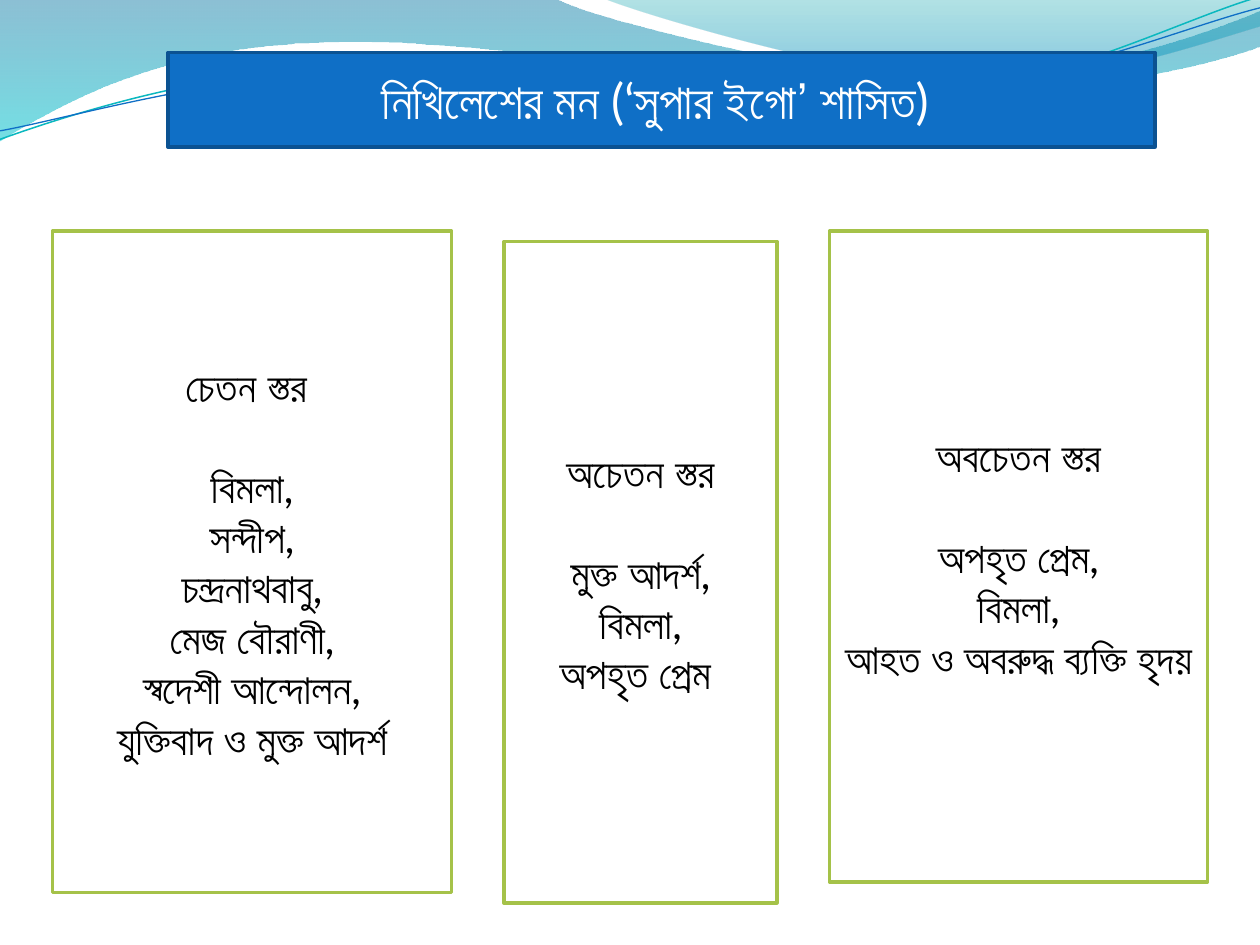
from math import cos, sin, radians
from lxml.etree import SubElement as Sub
from pptx import Presentation
from pptx.dml.color import RGBColor
from pptx.enum.shapes import MSO_SHAPE as Kind
from pptx.enum.text import MSO_ANCHOR as Anchor, PP_ALIGN as Align
from pptx.oxml.ns import qn
from pptx.util import Pt

FONT = "Lato"
TILT = 2.7

# Wave outlines: a pair is a line end, six numbers are a Bezier curve
BAND = [(0, 0), (317, -1), (343, 12, 478, 45, 546, 45),
        (614, 45, 690, 19, 720, 6), (721, 26),
        (708, 32, 626, 55, 537, 54), (447, 54, 275, 20, 185, 24),
        (93, 26, 33, 60, -1, 81)]
CREST = [(345, -1), (366, 8, 491, 45, 554, 47),
         (617, 50, 692, 23, 720, 15), (720, 0)]
TEAL = [(-1, 80), (35, 67, 114, 41, 199, 37.5),
        (284, 34, 427, 64, 513, 57.5), (600, 51, 675, 11, 718.5, -1.5)]
BLUE = [(-1, 75), (34, 69, 118, 44, 204, 40),
        (290, 36.5, 430, 60.5, 516, 54), (602, 48, 677.5, 15, 720, 4.5)]

# Left, top, width, height, heading, items
CARDS = [
    (30, 132, 228, 378, "চেতন স্তর ",
     ["বিমলা,", "সন্দীপ,", "চন্দ্রনাথবাবু,", "মেজ বৌরাণী,",
      "স্বদেশী আন্দোলন,", "যুক্তিবাদ ও মুক্ত আদর্শ"]),
    (288, 138, 156, 378, "অচেতন স্তর",
     ["মুক্ত আদর্শ,", "বিমলা,", "অপহৃত প্রেম "]),
    (474, 132, 216, 372, "অবচেতন স্তর",
     ["অপহৃত প্রেম,", "বিমলা,", "আহত ও অবরুদ্ধ ব্যক্তি হৃদয় "]),
]


def color(code):
    return RGBColor.from_string(code)


def turn(path, angle, mid):
    """Rotate every point of a path about a middle."""
    c, s = cos(radians(angle)), sin(radians(angle))
    out = []
    for step in path:
        spot = []
        for x, y in zip(step[::2], step[1::2]):
            dx, dy = x - mid[0], y - mid[1]
            spot += [mid[0] + dx * c - dy * s, mid[1] + dx * s + dy * c]
        out.append(tuple(spot))
    return out


def outline(slide, path, close):
    """Freeform whose six-number steps become Bezier curves."""
    dots = [(Pt(x), Pt(y)) for step in path
            for x, y in zip(step[::2], step[1::2])]
    pen = slide.shapes.build_freeform(*dots[0])
    pen.add_line_segments(dots[1:], close=close)
    shape = pen.convert_to_shape()
    shape.shadow.inherit = False
    lines = iter(list(shape._element.iter(qn("a:lnTo"))))
    for step in path[1:]:
        first = next(lines)
        if len(step) == 6:
            curve = first.makeelement(qn("a:cubicBezTo"))
            first.addprevious(curve)
            for line in (first, next(lines), next(lines)):
                curve.append(line[0])
                line.getparent().remove(line)
    return shape


def wave(slide, path, stops):
    """Filled wave; each stop is position, colour and opacity in percent."""
    shape = outline(slide, path, True)
    shape.line.fill.background()
    shape.fill.gradient()
    grad = shape._element.spPr.find(qn("a:gradFill"))
    for node in list(grad):
        grad.remove(node)
    group = Sub(grad, qn("a:gsLst"))
    for pos, code, alpha in stops:
        stop = Sub(group, qn("a:gs"), pos=str(pos * 1000))
        tone = Sub(stop, qn("a:srgbClr"), val=code)
        Sub(tone, qn("a:alpha"), val=str(alpha * 1000))
    Sub(grad, qn("a:lin"), ang="5400000", scaled="0")


def strand(slide, path, mid, code, width):
    """Thin curve, tilted about its middle."""
    shape = outline(slide, turn(path, TILT, mid), False)
    shape.rotation = 360 - TILT
    shape.fill.background()
    shape.line.color.rgb = color(code)
    shape.line.width = Pt(width)


def box(slide, place, fill, edge, lines, size, ink):
    shape = slide.shapes.add_shape(Kind.RECTANGLE, *map(Pt, place))
    shape.shadow.inherit = False
    shape.fill.solid()
    shape.fill.fore_color.rgb = color(fill)
    shape.line.color.rgb = color(edge)
    shape.line.width = Pt(2)
    frame = shape.text_frame
    frame.word_wrap = True
    frame.vertical_anchor = Anchor.MIDDLE
    frame.text = "\n".join(lines)
    for para in frame.paragraphs:
        para.alignment = Align.CENTER
        for run in para.runs:
            run.font.name = FONT
            run.font.size = Pt(size)
            run.font.color.rgb = color(ink)
    return frame


def card(slide, place, head, items):
    frame = box(slide, place, "FFFFFF", "A5C249", [head] + items,
                24, "000000")
    top = frame.paragraphs[0]
    top.space_after = Pt(28.8)
    top.runs[0].font.bold = True


def main():
    deck = Presentation()
    deck.slide_width, deck.slide_height = Pt(720), Pt(540)
    slide = deck.slides.add_slide(deck.slide_layouts[6])

    # Waves along the top
    wave(slide, BAND, [(0, "0074A1", 45), (100, "00C6CF", 55)])
    wave(slide, CREST, [(0, "00A1A9", 30), (80, "008BBF", 45)])
    strand(slide, TEAL, (359, 41.5), "0AB8BF", 0.85)
    strand(slide, BLUE, (360, 42.5), "0F6FC6", 0.75)

    # Title bar
    box(slide, (96, 30, 564, 54), "0F6FC6", "0B5292",
        ["নিখিলেশের মন (‘সুপার ইগো’ শাসিত) "], 28, "FFFFFF")

    # Layers of the mind
    for *place, head, items in CARDS:
        card(slide, place, head, items)

    deck.save("out.pptx")


if __name__ == "__main__":
    main()
